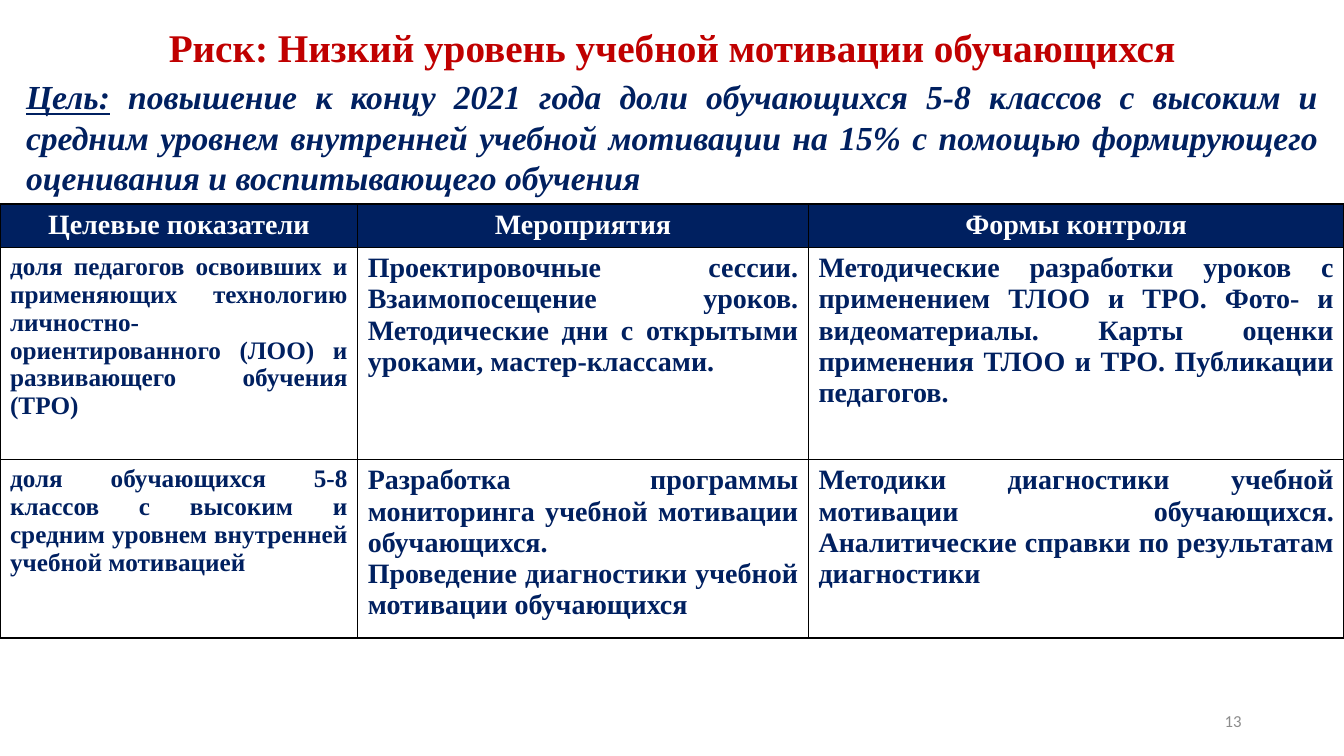
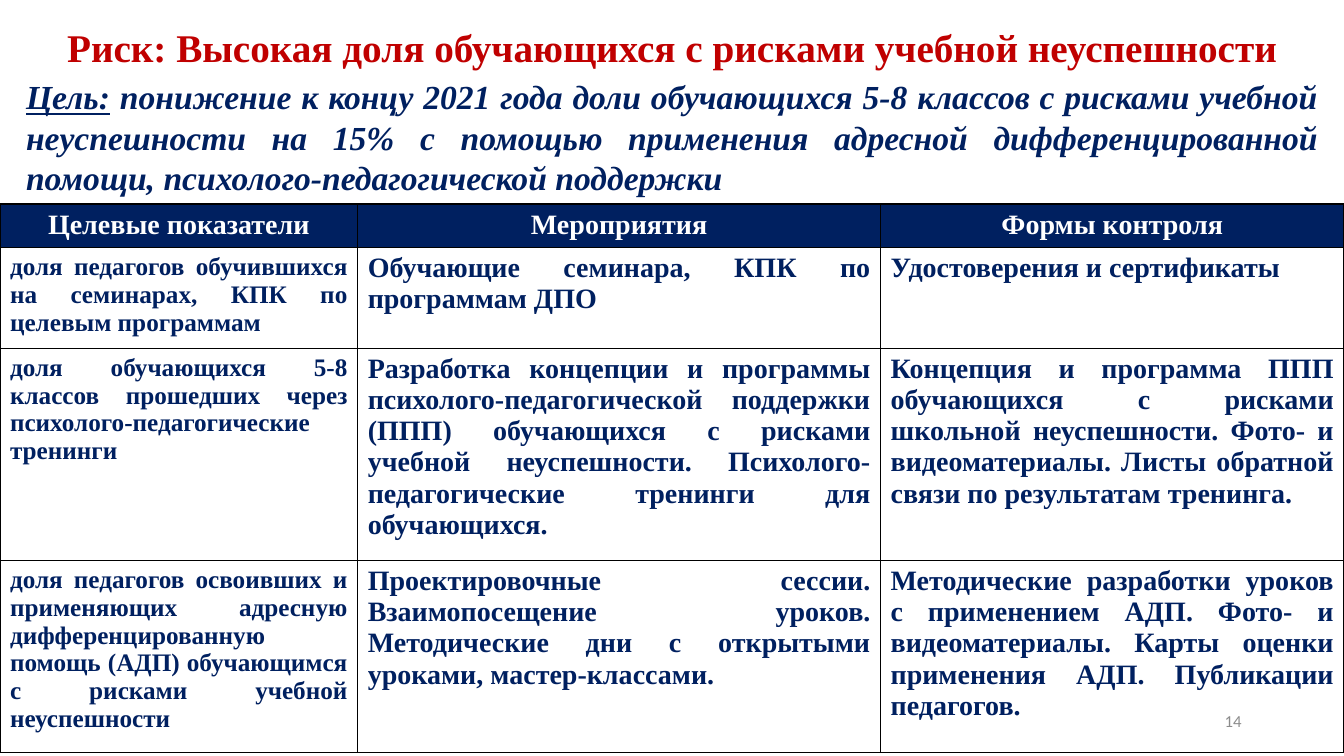
import pptx
import pptx.dml.color
import pptx.enum.text
import pptx.oxml.ns
import pptx.util
from lxml import etree

Pt = pptx.util.Pt
RGBColor = pptx.dml.color.RGBColor
ALIGN = pptx.enum.text.PP_ALIGN
ANCHOR = pptx.enum.text.MSO_ANCHOR

RED = RGBColor(0xC0, 0x00, 0x00)
NAVY = RGBColor(0x00, 0x20, 0x60)
WHITE = RGBColor(0xFF, 0xFF, 0xFF)
BLACK = RGBColor(0x00, 0x00, 0x00)
GRAY = RGBColor(0x8C, 0x8C, 0x8C)
SERIF = "Times New Roman"
SANS = "Calibri"
SLIDE_WIDTH = 960
TABLE_TOP = 145.75
HEADER_HEIGHT = 31
HEADERS = ["Целевые показатели", "Мероприятия", "Формы контроля"]
SESSIONS = "Проектировочные сессии. Взаимопосещение уроков. Методические дни с открытыми уроками, мастер-классами."

RISKS = [
    {
        "number": "13",
        "title": "Риск: Низкий уровень учебной мотивации обучающихся",
        "goal": " повышение к концу 2021 года доли обучающихся 5-8 классов с высоким и средним уровнем внутренней учебной мотивации на 15% с помощью формирующего оценивания и воспитывающего обучения",
        "widths": [255.5, 322, 382.5],
        "heights": [151.5, 127],
        "rows": [
            [
                "доля педагогов освоивших и применяющих технологию личностно-ориентированного (ЛОО) и развивающего обучения (ТРО)",
                SESSIONS,
                "Методические разработки уроков с применением ТЛОО и ТРО. Фото- и видеоматериалы. Карты оценки применения ТЛОО и ТРО. Публикации педагогов.",
            ],
            [
                "доля обучающихся 5-8 классов с высоким и средним уровнем внутренней учебной мотивацией",
                "Разработка программы мониторинга учебной мотивации обучающихся.\nПроведение диагностики учебной мотивации обучающихся",
                "Методики диагностики учебной мотивации обучающихся. Аналитические справки по результатам диагностики",
            ],
        ],
    },
    {
        "number": "14",
        "title": "Риск: Высокая доля обучающихся с рисками учебной неуспешности",
        "goal": " понижение к концу 2021 года доли обучающихся 5-8 классов с рисками учебной неуспешности на 15% с помощью применения адресной дифференцированной помощи, психолого-педагогической поддержки",
        "widths": [255.5, 373.5, 331],
        "heights": [72, 151.5, 136.5],
        "rows": [
            [
                "доля педагогов обучившихся на семинарах, КПК по целевым программам",
                "Обучающие семинара, КПК по программам ДПО",
                "Удостоверения и сертификаты",
            ],
            [
                "доля обучающихся 5-8 классов прошедших через психолого-педагогические тренинги",
                "Разработка концепции и программы психолого-педагогической поддержки (ППП) обучающихся с рисками учебной неуспешности. Психолого-педагогические тренинги для обучающихся.",
                "Концепция и программа ППП обучающихся с рисками школьной неуспешности. Фото- и видеоматериалы. Листы обратной связи по результатам тренинга.",
            ],
            [
                "доля педагогов освоивших и применяющих адресную дифференцированную помощь (АДП) обучающимся с рисками учебной неуспешности",
                SESSIONS,
                "Методические разработки уроков с применением АДП. Фото- и видеоматериалы. Карты оценки применения АДП. Публикации педагогов.",
            ],
        ],
    },
]


def format_text(text_frame, size, color, alignment, font_name=SERIF, bold=True):
    for paragraph in text_frame.paragraphs:
        paragraph.alignment = alignment
        for run in paragraph.runs:
            run.font.name = font_name
            run.font.size = Pt(size)
            run.font.bold = bold
            run.font.color.rgb = color


def add_borders(cell):
    properties = cell._tc.get_or_add_tcPr()
    for position, side in enumerate(["lnL", "lnR", "lnT", "lnB"]):
        line = etree.Element(pptx.oxml.ns.qn("a:" + side), w=str(Pt(1)))
        fill = etree.SubElement(line, pptx.oxml.ns.qn("a:solidFill"))
        etree.SubElement(fill, pptx.oxml.ns.qn("a:srgbClr"), val=str(BLACK))
        properties.insert(position, line)


presentation = pptx.Presentation()
presentation.slide_width = Pt(SLIDE_WIDTH)
presentation.slide_height = Pt(540)

for risk in RISKS:
    slide = presentation.slides.add_slide(presentation.slide_layouts[5])

    title = slide.shapes.title
    title.left, title.top = Pt(0), Pt(6)
    title.width, title.height = Pt(SLIDE_WIDTH), Pt(59)
    title.text_frame.text = risk["title"]
    title.text_frame.vertical_anchor = ANCHOR.MIDDLE
    title.text_frame.paragraphs[0].line_spacing = 0.9
    format_text(title.text_frame, 28, RED, ALIGN.CENTER)

    goal_box = slide.shapes.add_textbox(Pt(11.5), Pt(51), Pt(937), Pt(94.5))
    goal_box.text_frame.word_wrap = True
    paragraph = goal_box.text_frame.paragraphs[0]
    for text, underline in [("Цель:", True), (risk["goal"], False)]:
        run = paragraph.add_run()
        run.text = text
        run.font.italic = True
        run.font.underline = underline
    format_text(goal_box.text_frame, 24, NAVY, ALIGN.JUSTIFY)

    rows = [HEADERS] + risk["rows"]
    heights = [HEADER_HEIGHT] + risk["heights"]
    table = slide.shapes.add_table(
        len(rows), len(HEADERS), Pt(0), Pt(TABLE_TOP), Pt(SLIDE_WIDTH), Pt(sum(heights))
    ).table
    for column, width in zip(table.columns, risk["widths"]):
        column.width = Pt(width)
    for row_index, (texts, height) in enumerate(zip(rows, heights)):
        table.rows[row_index].height = Pt(height)
        for column_index, text in enumerate(texts):
            cell = table.cell(row_index, column_index)
            cell.text_frame.text = text
            cell.fill.solid()
            if row_index == 0:
                cell.fill.fore_color.rgb = NAVY
                format_text(cell.text_frame, 20, WHITE, ALIGN.CENTER)
            else:
                cell.fill.fore_color.rgb = WHITE
                size = 18 if column_index == 0 else 20
                format_text(cell.text_frame, size, NAVY, ALIGN.JUSTIFY)
            add_borders(cell)

    number_box = slide.shapes.add_textbox(Pt(678), Pt(500.5), Pt(216), Pt(29))
    number_box.text_frame.word_wrap = True
    number_box.text_frame.text = risk["number"]
    number_box.text_frame.vertical_anchor = ANCHOR.MIDDLE
    format_text(number_box.text_frame, 12, GRAY, ALIGN.RIGHT, SANS, False)

presentation.save("out.pptx")
